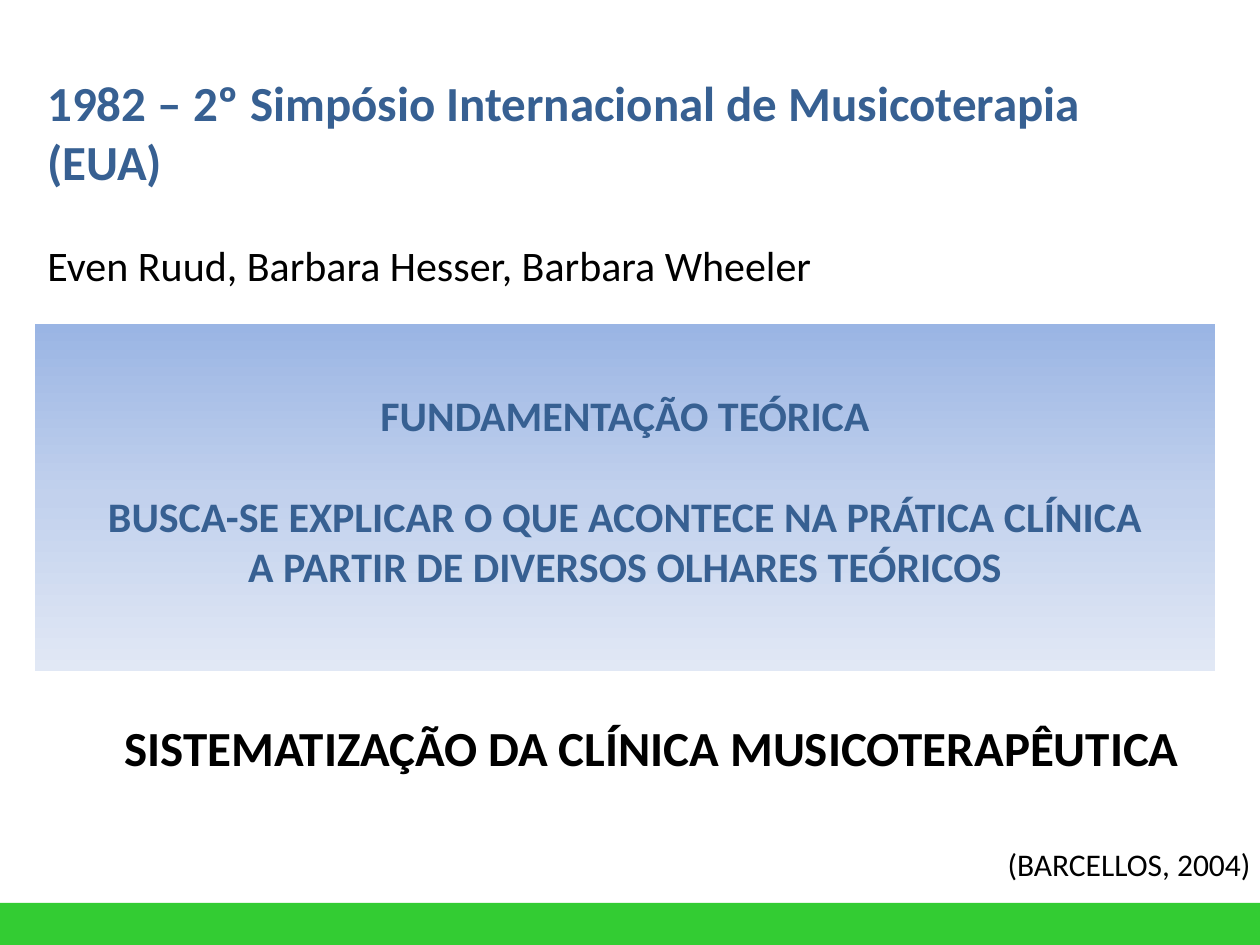
from copy import deepcopy

from pptx import Presentation
from pptx.dml.color import RGBColor
from pptx.enum.shapes import MSO_SHAPE
from pptx.enum.text import MSO_AUTO_SIZE, PP_ALIGN
from pptx.oxml.ns import qn
from pptx.util import Emu, Pt

EMU_PER_PX = 914400 // 126
FONT = "Calibri"
BLUE, BLACK, GREEN = "376092", "000000", "33CC33"
PANEL_STOPS = [(0, "9AB5E4"), (0.5, "C2D1ED"), (1, "E1E8F5")]


def px(length):
    return Emu(length * EMU_PER_PX)


def color(value):
    return RGBColor.from_string(value)


def add_block(slide, left, top, width, height):
    block = slide.shapes.add_shape(
        MSO_SHAPE.RECTANGLE, px(left), px(top), px(width), px(height))
    block.shadow.inherit = False
    block.line.fill.background()
    return block


def add_solid_block(slide, box, fill):
    block = add_block(slide, *box)
    block.fill.solid()
    block.fill.fore_color.rgb = color(fill)


def add_gradient_block(slide, box, stops):
    block = add_block(slide, *box)
    block.fill.gradient()
    block.fill.gradient_angle = 270
    stop_list = block._element.spPr.find(qn("a:gradFill")).find(qn("a:gsLst"))
    stop_list.insert(1, deepcopy(stop_list[0]))
    for stop, (position, shade) in zip(block.fill.gradient_stops, stops):
        stop.position = position
        stop.color.rgb = color(shade)


def add_text(slide, box, lines, size, ink, bold=False,
             align=PP_ALIGN.LEFT, wrap=True):
    frame = slide.shapes.add_textbox(*map(px, box)).text_frame
    frame.word_wrap = wrap
    frame.auto_size = MSO_AUTO_SIZE.SHAPE_TO_FIT_TEXT
    frame.text = "\n".join(lines)
    for paragraph in frame.paragraphs:
        paragraph.alignment = align
        for run in paragraph.runs:
            run.font.name = FONT
            run.font.size = Pt(size)
            run.font.bold = bold
            run.font.color.rgb = color(ink)
    return frame


def main():
    deck = Presentation()
    deck.slide_width, deck.slide_height = px(1260), px(945)
    slide = deck.slides.add_slide(deck.slide_layouts[6])

    add_gradient_block(slide, (35, 324, 1180, 347), PANEL_STOPS)
    add_solid_block(slide, (0, 903, 1260, 54), GREEN)

    add_text(slide, (916, 839, 347, 89), ["(BARCELLOS, 2004)"], 18, BLACK,
             align=PP_ALIGN.RIGHT)
    add_text(slide, (35, 66, 1121, 131),
             ["1982 – 2º Simpósio Internacional de Musicoterapia", "(EUA)"],
             28, BLUE, bold=True)
    add_text(slide, (35, 233, 1180, 63),
             ["Even Ruud, Barbara Hesser, Barbara Wheeler"], 24, BLACK,
             align=PP_ALIGN.JUSTIFY)
    foundation = add_text(
        slide, (35, 383, 1180, 217),
        ["FUNDAMENTAÇÃO TEÓRICA",
         "BUSCA-SE EXPLICAR O QUE ACONTECE NA PRÁTICA CLÍNICA",
         "A PARTIR DE DIVERSOS OLHARES TEÓRICOS"],
        24, BLUE, bold=True, align=PP_ALIGN.CENTER)
    foundation.paragraphs[1].space_before = Pt(29)
    add_text(slide, (112, 711, 1092, 72),
             ["SISTEMATIZAÇÃO DA CLÍNICA MUSICOTERAPÊUTICA"], 28, BLACK,
             bold=True, wrap=False)

    deck.save("out.pptx")


if __name__ == "__main__":
    main()
